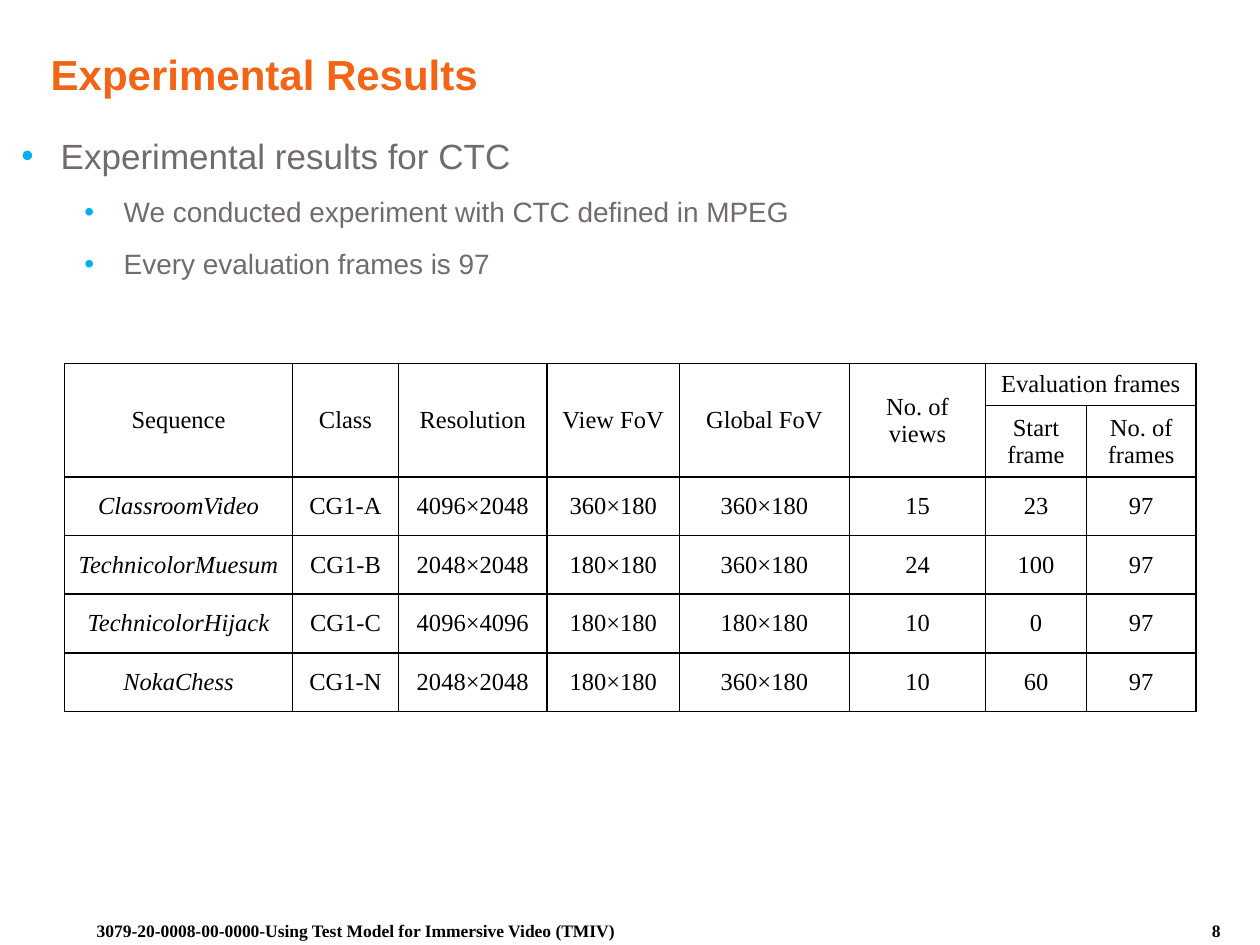
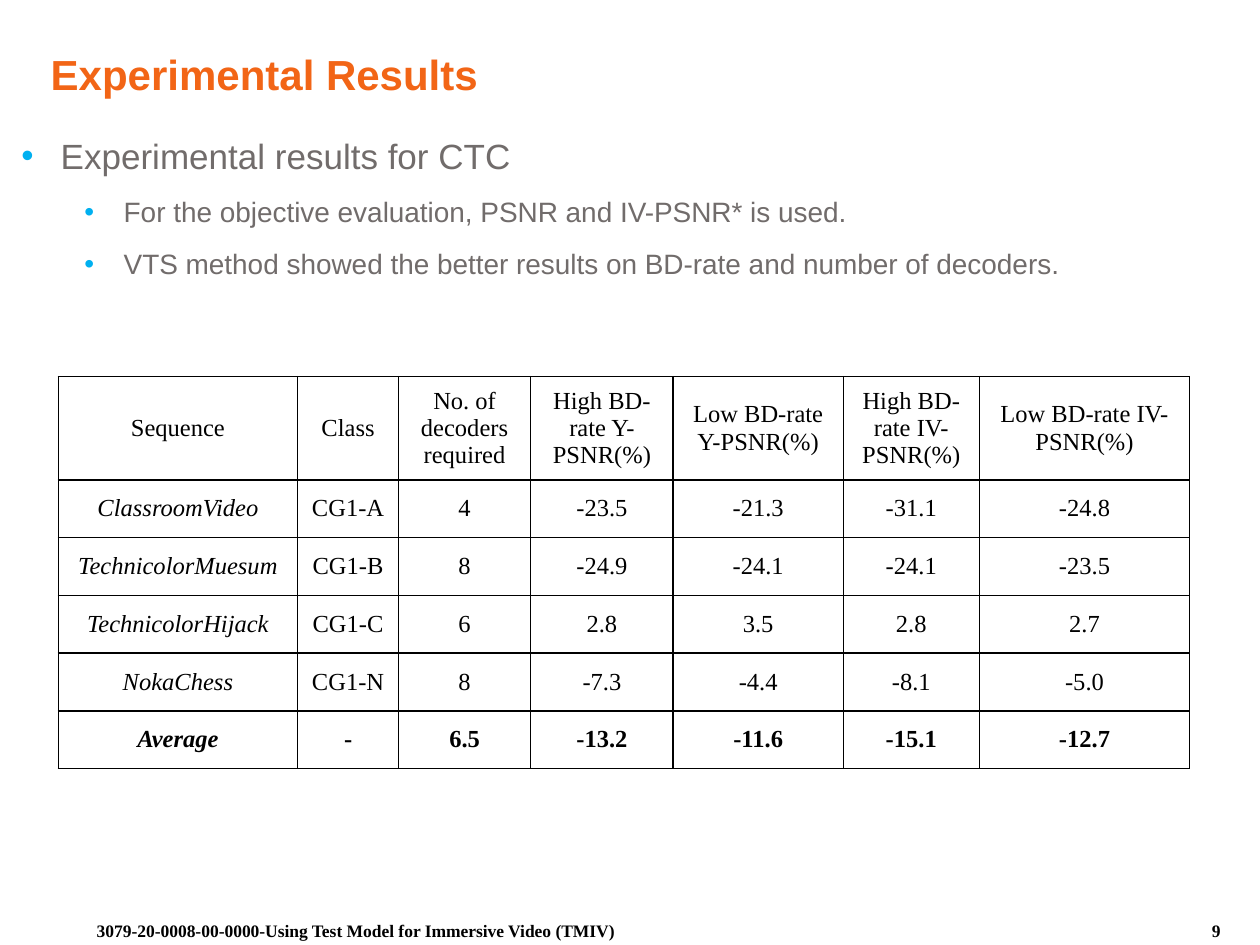
from dataclasses import dataclass

from lxml.etree import SubElement
from pptx import Presentation
from pptx.dml.color import RGBColor as RGB
from pptx.enum.text import MSO_ANCHOR as ANCHOR, MSO_AUTO_SIZE as AUTO, PP_ALIGN as ALIGN
from pptx.oxml.ns import qn
from pptx.util import Pt


@dataclass(frozen=True)
class Theme:
    heading_color: str = "F26516"
    body_color: str = "716C6B"
    bullet_color: str = "00B0F0"
    ink: str = "000000"
    sans: str = "Arial"
    serif: str = "Times New Roman"
    title_size: float = 24
    list_sizes: tuple = (20, 16)
    table_size: float = 14
    footer_size: float = 10
    border: float = 1


FOOTER = "3079-20-0008-00-0000-Using Test Model for Immersive Video (TMIV)"
TITLE = "Experimental Results"
TOPIC = "Experimental results for CTC"
FIRST_NUMBER = 8

SEQUENCE_ROWS = [
    ("Sequence", "Class", "Resolution", "View FoV", "Global FoV", "No. of views",
     "Evaluation frames", None),
    (None, None, None, None, None, None, "Start frame", "No. of frames"),
    ("ClassroomVideo", "CG1-A", "4096×2048", "360×180", "360×180", "15", "23", "97"),
    ("TechnicolorMuesum", "CG1-B", "2048×2048", "180×180", "360×180", "24", "100", "97"),
    ("TechnicolorHijack", "CG1-C", "4096×4096", "180×180", "180×180", "10", "0", "97"),
    ("NokaChess", "CG1-N", "2048×2048", "180×180", "360×180", "10", "60", "97"),
]
SEQUENCE_MERGES = [((0, col), (1, col)) for col in range(6)] + [((0, 6), (0, 7))]

RATE_ROWS = [
    ("Sequence", "Class", "No. of decoders required", "High BD-rate Y-PSNR(%)",
     "Low BD-rate Y-PSNR(%)", "High BD-rate IV-PSNR(%)", "Low BD-rate IV-PSNR(%)"),
    ("ClassroomVideo", "CG1-A", "4", "-23.5", "-21.3", "-31.1", "-24.8"),
    ("TechnicolorMuesum", "CG1-B", "8", "-24.9", "-24.1", "-24.1", "-23.5"),
    ("TechnicolorHijack", "CG1-C", "6", "2.8", "3.5", "2.8", "2.7"),
    ("NokaChess", "CG1-N", "8", "-7.3", "-4.4", "-8.1", "-5.0"),
    ("Average", "-", "6.5", "-13.2", "-11.6", "-15.1", "-12.7"),
]


def write(p, text, *, size, font, color, bold=False, italic=False, align=ALIGN.LEFT,
          spacing=None, before=0):
    p.alignment = align
    p.space_before = Pt(before)
    if spacing:
        p.line_spacing = spacing
    r = p.add_run()
    r.text = text
    r.font.size = Pt(size)
    r.font.name = font
    r.font.bold = bold
    r.font.italic = italic
    r.font.color.rgb = RGB.from_string(color)


def place(sp, left, top, width, height):
    sp.left, sp.top, sp.width, sp.height = Pt(left), Pt(top), Pt(width), Pt(height)


class Deck:
    def __init__(self, theme):
        self.theme = theme
        self.prs = Presentation()
        self.prs.slide_width, self.prs.slide_height = Pt(720), Pt(540)
        self.s = None

    def slide(self, title, number):
        self.s = self.prs.slides.add_slide(self.prs.slide_layouts[1])
        self.title(title)
        self.footer(FOOTER, 48.2, 378.7)
        self.footer(str(number), 685.4, 34.6)

    def title(self, text):
        t = self.theme
        sp = self.s.shapes.title
        place(sp, 23, 21.6, 666.7, 44.6)
        tf = sp.text_frame
        tf.auto_size = AUTO.NONE
        tf.vertical_anchor = ANCHOR.MIDDLE
        tf.margin_left = Pt(6)
        write(tf.paragraphs[0], text, size=t.title_size, font=t.sans,
              color=t.heading_color, bold=True, spacing=0.9)

    def footer(self, text, left, width):
        t = self.theme
        tf = self.s.shapes.add_textbox(Pt(left), Pt(522), Pt(width), Pt(16)).text_frame
        tf.word_wrap = True
        write(tf.paragraphs[0], text, size=t.footer_size, font=t.serif,
              color=t.ink, bold=True)

    def bullets(self, topic, *points):
        t = self.theme
        sp = self.s.placeholders[1]
        place(sp, 5, 59.8, 715, 127.4)
        tf = sp.text_frame
        tf.auto_size = AUTO.NONE
        tf.margin_top = Pt(5)
        for i, text in enumerate((topic, *points)):
            level = min(i, 1)
            p = tf.paragraphs[0] if i == 0 else tf.add_paragraph()
            p.level = level
            self.bullet(p, 22.5 + 36 * level)
            write(p, text, size=t.list_sizes[level], font=t.sans, color=t.body_color,
                  spacing=1.5, before=level)

    def bullet(self, p, indent):
        pPr = p._p.get_or_add_pPr()
        pPr.set("marL", str(Pt(indent)))
        pPr.set("indent", str(Pt(-22.5)))
        color = SubElement(pPr, qn("a:buClr"))
        SubElement(color, qn("a:srgbClr"), val=self.theme.bullet_color)
        SubElement(pPr, qn("a:buFont"), typeface=self.theme.sans)
        SubElement(pPr, qn("a:buChar"), char="•")

    def table(self, rows, left, top, widths, heights, header_rows=1, merges=()):
        t = self.theme
        frame = self.s.shapes.add_table(len(rows), len(widths), Pt(left), Pt(top),
                                        Pt(sum(widths)), Pt(sum(heights)))
        table = frame.table
        table.first_row = table.horz_banding = False
        for column, width in zip(table.columns, widths):
            column.width = Pt(width)
        for row, height in zip(table.rows, heights):
            row.height = Pt(height)
        for start, end in merges:
            table.cell(*start).merge(table.cell(*end))
        for i, values in enumerate(rows):
            for j, text in enumerate(values):
                cell = table.cell(i, j)
                self.borders(cell)
                cell.fill.background()
                cell.vertical_anchor = ANCHOR.MIDDLE
                if text is not None:
                    write(cell.text_frame.paragraphs[0], text, size=t.table_size,
                          font=t.serif, color=t.ink, align=ALIGN.CENTER,
                          bold=values[0] == "Average",
                          italic=j == 0 and i >= header_rows)

    def borders(self, cell):
        tcPr = cell._tc.get_or_add_tcPr()
        for side in ("lnL", "lnR", "lnT", "lnB"):
            ln = SubElement(tcPr, qn(f"a:{side}"), w=str(Pt(self.theme.border)))
            fill = SubElement(ln, qn("a:solidFill"))
            SubElement(fill, qn("a:srgbClr"), val=self.theme.ink)


def main():
    deck = Deck(Theme())

    deck.slide(TITLE, FIRST_NUMBER)
    deck.bullets(TOPIC, "We conducted experiment with CTC defined in MPEG",
                 "Every evaluation frames is 97")
    deck.table(SEQUENCE_ROWS, 36.9, 207.7,
               widths=[130.3, 60.5, 85, 75.6, 97.2, 77.8, 57.6, 62.6],
               heights=[22.8, 38.2] + [33.5] * 4,
               header_rows=2, merges=SEQUENCE_MERGES)

    deck.slide(TITLE, FIRST_NUMBER + 1)
    deck.bullets(TOPIC, "For the objective evaluation, PSNR and IV-PSNR* is used.",
                 "VTS method showed the better results on BD-rate and number of decoders.")
    deck.table(RATE_ROWS, 33.3, 215.2,
               widths=[136.8, 57.6, 75.6, 81.4, 97.2, 77.8, 120.2],
               heights=[59] + [33] * 5)

    deck.prs.save("out.pptx")


if __name__ == "__main__":
    main()
